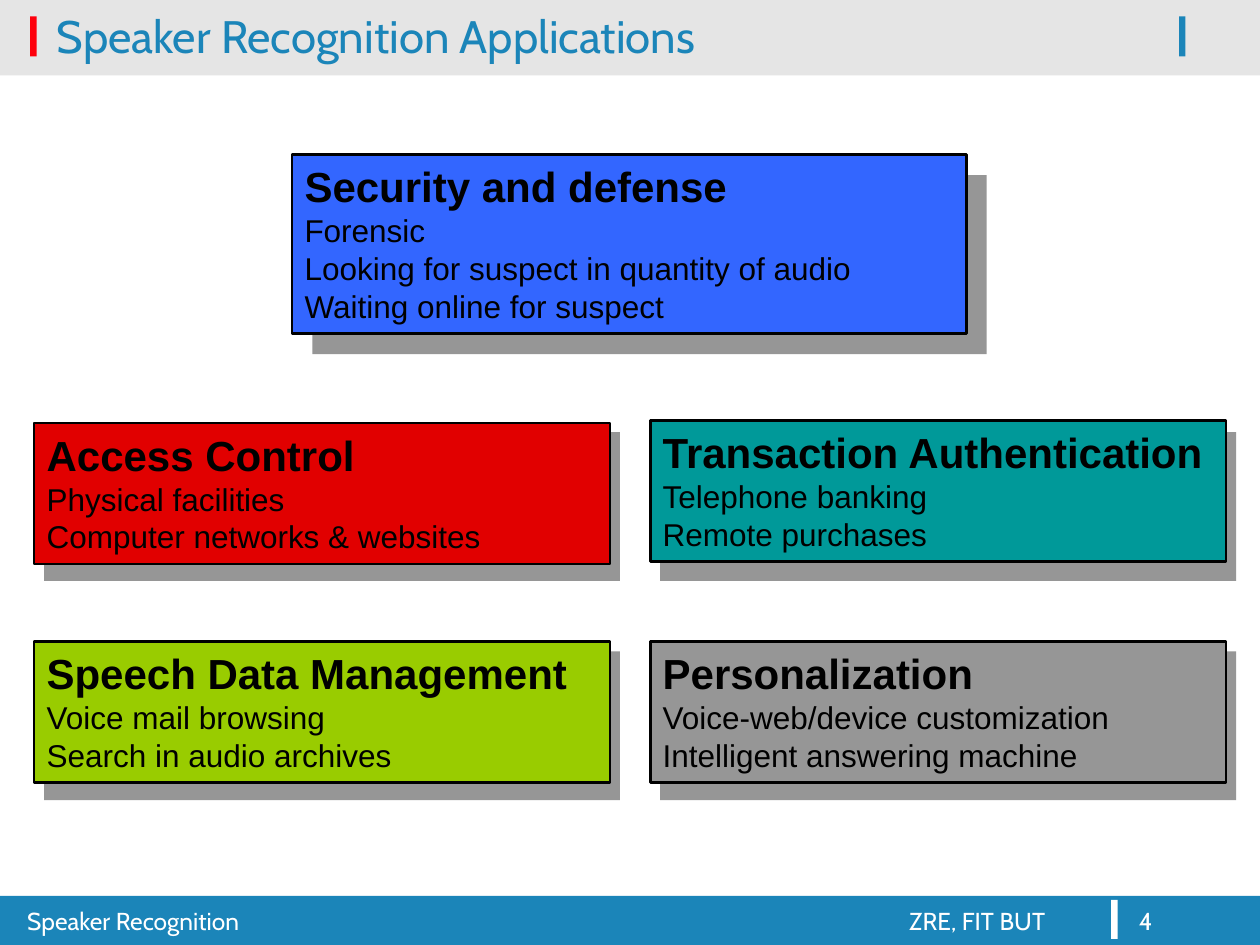
from lxml import etree
from pptx import Presentation
from pptx.dml.color import RGBColor
from pptx.enum import shapes, text
from pptx.oxml import ns
from pptx.util import Cm, Pt

# Content
TITLE = "Speaker Recognition Applications"
FOOTER = "Speaker Recognition\tZRE, FIT BUT"
PAGE_NUMBER = "4"
LEFT, RIGHT = 0.69, 13.11
SMALL, LARGE = (11.61, 2.84), (13.59, 3.61)
# heading, lines, fill, left, top, size, shadow offset (x, y), shadow height
PANELS = [
    ("Access Control", ["Physical facilities", "Computer networks & websites"],
     "E10000", LEFT, 8.53, SMALL, (0.2, 0.18), 3.0),
    ("Transaction Authentication", ["Telephone banking", "Remote purchases"],
     "009999", RIGHT, 8.48, SMALL, (0.2, 0.23), 3.0),
    ("Speech Data Management", ["Voice mail browsing", "Search in audio archives"],
     "99CC00", LEFT, 12.93, SMALL, (0.2, 0.2), 3.0),
    ("Personalization",
     ["Voice-web/device customization", "Intelligent answering machine"],
     "969696", RIGHT, 12.93, SMALL, (0.2, 0.2), 3.0),
    ("Security and defense",
     ["Forensic", "Looking for suspect in quantity of audio",
      "Waiting online for suspect"],
     "3366FF", 5.89, 3.12, LARGE, (0.41, 0.41), 3.61),
]
# left, top, width, height, fill
BARS = [
    (0, 0, 25.4, 1.52, "E5E5E5"),
    (0, 18.06, 25.4, 0.99, "1B85B9"),
    (0.61, 0.33, 0.13, 0.81, "FE000C"),
    (23.77, 0.33, 0.13, 0.81, "1B85B9"),
    (22.4, 18.14, 0.13, 0.79, "FFFFFF"),
]


def color(value):
    return RGBColor.from_string(value)


def add_rect(page, left, top, width, height, fill, outlined=False):
    box = page.shapes.add_shape(shapes.MSO_SHAPE.RECTANGLE,
                                Cm(left), Cm(top), Cm(width), Cm(height))
    box.shadow.inherit = False
    box.fill.solid()
    box.fill.fore_color.rgb = color(fill)
    if outlined:
        box.line.color.rgb = color("000000")
        box.line.width = Pt(1.5)
    else:
        box.line.fill.background()
    return box


def add_span(para, words, font, size, fill, bold=False):
    span = para.add_run()
    span.text = words
    span.font.name = font
    span.font.size = Pt(size)
    span.font.bold = bold
    span.font.color.rgb = color(fill)


def add_footer(page, words, left, width, tab=None):
    box = page.shapes.add_textbox(Cm(left), Cm(18.14), Cm(width), Cm(0.91))
    box.text_frame.word_wrap = True
    para = box.text_frame.paragraphs[0]
    if tab:
        stops = etree.SubElement(para._p.get_or_add_pPr(), ns.qn("a:tabLst"))
        etree.SubElement(stops, ns.qn("a:tab"), pos=str(Cm(tab)), algn="l")
    add_span(para, words, "Cabin", 14, "FFFFFF")


def add_panel(page, heading, lines, fill, left, top, size):
    box = add_rect(page, left, top, *size, fill, outlined=True)
    frame = box.text_frame
    frame.word_wrap = True
    frame.vertical_anchor = text.MSO_ANCHOR.TOP
    for number, words in enumerate([heading] + lines):
        para = frame.add_paragraph() if number else frame.paragraphs[0]
        para.alignment = text.PP_ALIGN.LEFT
        add_span(para, words, "Arial", 18 if number else 24, "000000", bold=not number)


deck = Presentation()
deck.slide_width, deck.slide_height = Cm(25.4), Cm(19.05)
page = deck.slides.add_slide(deck.slide_layouts[5])

# Header and footer
for bar in BARS:
    add_rect(page, *bar)
add_footer(page, FOOTER, 0.3, 21.79, tab=17.78)
add_footer(page, PAGE_NUMBER, 22.71, 2.29)

# Title, moved in front of the header band
title = page.shapes.title
title.left, title.top, title.width, title.height = Cm(0.89), Cm(-0.28), Cm(22.61), Cm(2)
page.shapes._spTree.append(title._element)
title.text_frame.vertical_anchor = text.MSO_ANCHOR.MIDDLE
para = title.text_frame.paragraphs[0]
para.alignment = text.PP_ALIGN.LEFT
add_span(para, TITLE, "Cabin", 26, "1B85B9")

# Application panels, each on its grey shadow
for heading, lines, fill, left, top, size, (dx, dy), depth in PANELS:
    add_rect(page, left + dx, top + dy, size[0], depth, "969696")
    add_panel(page, heading, lines, fill, left, top, size)

deck.save("out.pptx")
